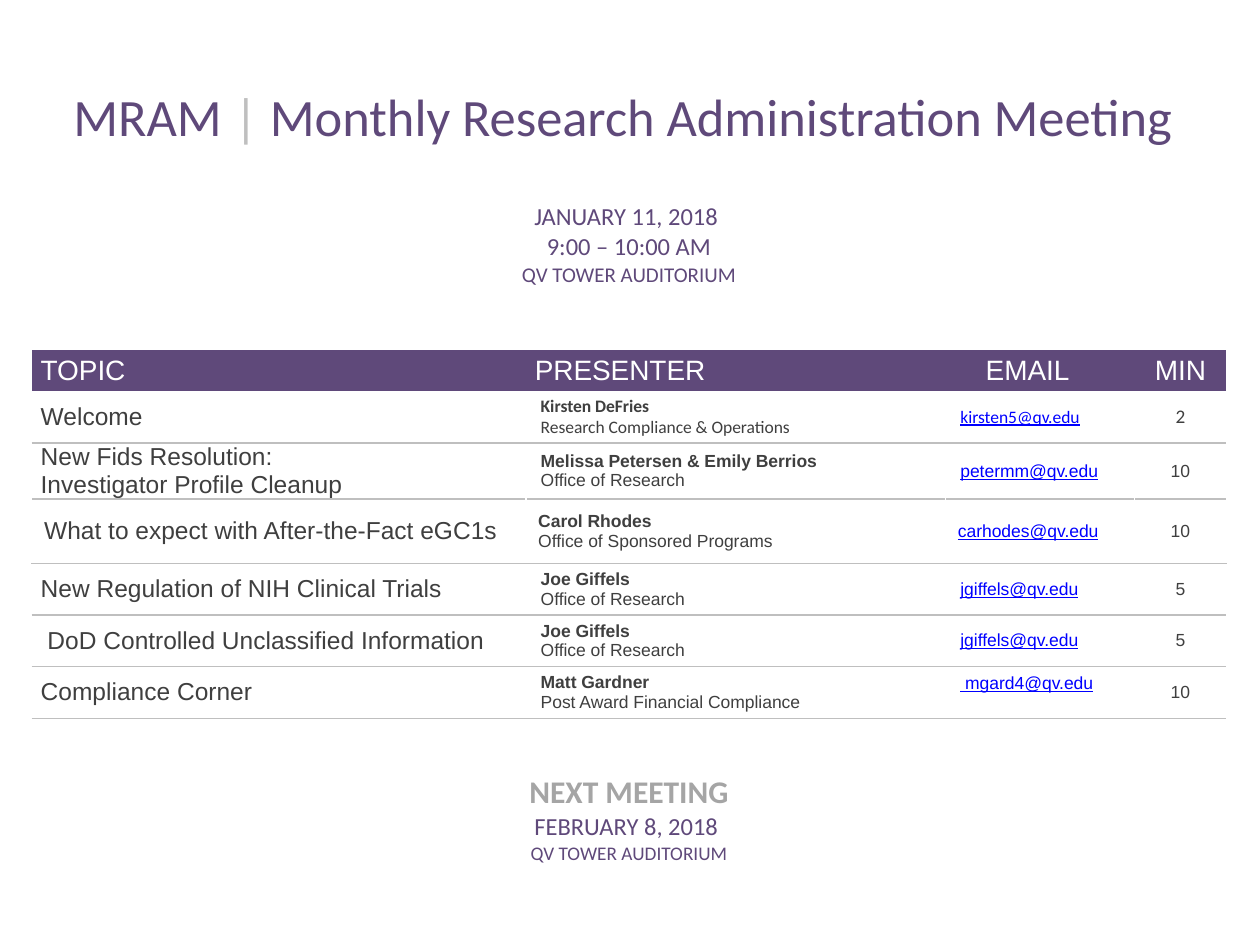
"""Build the agenda slide of a monthly research administration meeting."""
from lxml import etree
from pptx import Presentation
from pptx.dml.color import RGBColor
from pptx.enum.text import MSO_ANCHOR, PP_ALIGN
from pptx.oxml.ns import qn
from pptx.util import Cm, Pt

LEFT, CENTER = PP_ALIGN.LEFT, PP_ALIGN.CENTER
MIDDLE, BOTTOM = MSO_ANCHOR.MIDDLE, MSO_ANCHOR.BOTTOM

THEME = {
    "purple": "5F497A", "rule": "BFBFBF", "gray": "A5A5A5", "ink": "3F3F3F",
    "link": "0000FF", "white": "FFFFFF",
    "sans": "Arial", "humanist": "Calibri",
    "title": 30, "next": 18, "header": 16, "topic": 14, "date": 14,
    "place": 12, "minutes": 11, "next_place": 11, "detail": 10,
}

TITLE = ["MRAM ", "|", " Monthly Research Administration Meeting "]
MEETING = [("JANUARY 11, 2018 ", "date"), ("9:00 – 10:00 AM", "date"), ("QV TOWER AUDITORIUM", "place")]
NEXT_MEETING = [("NEXT MEETING", "next"), ("FEBRUARY 8, 2018 ", "date"), ("QV TOWER AUDITORIUM", "next_place")]
HEADERS = ["TOPIC", "PRESENTER", "EMAIL", "MIN"]
AGENDA = [
    (["Welcome"], "Kirsten DeFries", "Research Compliance & Operations", "kirsten5@qv.edu", "2"),
    (["New Fids Resolution:", "Investigator Profile Cleanup"],
     "Melissa Petersen & Emily Berrios", "Office of Research", "petermm@qv.edu", "10"),
    (["What to expect with After-the-Fact eGC1s"],
     "Carol Rhodes", "Office of Sponsored Programs", "carhodes@qv.edu", "10"),
    (["New Regulation of NIH Clinical Trials"], "Joe Giffels", "Office of Research", "jgiffels@qv.edu", "5"),
    ([" DoD Controlled Unclassified Information"], "Joe Giffels", "Office of Research", "jgiffels@qv.edu", "5"),
    (["Compliance Corner"], "Matt Gardner", "Post Award Financial Compliance", " mgard4@qv.edu", "10"),
]
WELCOME, AFTER_THE_FACT, COMPLIANCE = 0, 2, 5

COLUMN_WIDTHS = [9.96, 8.46, 3.81, 1.85]
ROW_HEIGHTS = [1.57, 4.01, 0.84, 1.04, 1.13, 1.3, 1.04, 1.04, 1.04, 2.97]
TABLE_LEFT, TABLE_TOP = 0.64, 1.47
FIRST_AGENDA_ROW = 3
NARROW, WIDE, EVEN = 0.18, 0.3, 0.25
HEADER_INDENTS = [NARROW, NARROW, 0.81, NARROW]


def add_text(paragraph, text, size, color, font="sans", bold=False, underline=False, align=LEFT):
    paragraph.alignment = align
    run = paragraph.add_run()
    run.text = text
    run.font.name = THEME[font]
    run.font.size = Pt(THEME[size])
    run.font.color.rgb = RGBColor.from_string(THEME[color])
    run.font.bold = bold
    run.font.underline = underline


def add_lines(cell, lines):
    frame = cell.text_frame
    for index, (text, style) in enumerate(lines):
        paragraph = frame.add_paragraph() if index else frame.paragraphs[0]
        add_text(paragraph, text, **style)


def set_border(cell, **colors):
    properties = cell._tc.get_or_add_tcPr()
    for index, side in enumerate("LRTB"):
        line = etree.Element(qn(f"a:ln{side}"), w=str(Pt(1)))
        color = colors.get(side)
        if color:
            fill = etree.SubElement(line, qn("a:solidFill"))
            etree.SubElement(fill, qn("a:srgbClr"), val=THEME[color])
        else:
            etree.SubElement(line, qn("a:noFill"))
        properties.insert(index, line)


def format_cell(cell, fill="white", anchor=MIDDLE, left=NARROW, right=NARROW, top=0, bottom=0, **borders):
    cell.fill.solid()
    cell.fill.fore_color.rgb = RGBColor.from_string(THEME[fill])
    cell.vertical_anchor = anchor
    cell.margin_left, cell.margin_right = Cm(left), Cm(right)
    cell.margin_top, cell.margin_bottom = Cm(top), Cm(bottom)
    set_border(cell, **borders)


def fill_banner(table, row, bottom=0, **borders):
    cell = table.cell(row, 0)
    cell.merge(table.cell(row, len(COLUMN_WIDTHS) - 1))
    format_cell(cell, anchor=BOTTOM, bottom=bottom, **borders)
    return cell


def fill_agenda_row(table, index, topic, presenter, office, email, minutes):
    font = "humanist" if index == WELCOME else "sans"
    detail = {"size": "detail", "color": "ink", "font": font}
    minutes_size = "minutes" if index == WELCOME else "detail"
    columns = [
        [(line, {"size": "topic", "color": "ink"}) for line in topic],
        [(presenter, {**detail, "bold": True}), (office, detail)],
        [(email, {**detail, "color": "link", "underline": True})],
        [(minutes, {**detail, "size": minutes_size, "align": CENTER})],
    ]
    borders = {"B": "rule"}
    if index:
        borders["T"] = "rule"
    for column, lines in enumerate(columns):
        cell = table.cell(FIRST_AGENDA_ROW + index, column)
        add_lines(cell, lines)
        if index == AFTER_THE_FACT:
            format_cell(cell, left=EVEN, right=EVEN, top=EVEN, bottom=EVEN, L="white", R="white", **borders)
        else:
            margin = WIDE if column in (1, 2) else NARROW
            lift = 0.37 if index == COMPLIANCE and column == 2 else 0
            format_cell(cell, left=margin, right=margin, bottom=lift, **borders)


def main():
    presentation = Presentation()
    presentation.slide_width, presentation.slide_height = Cm(25.4), Cm(19.05)
    slide = presentation.slides.add_slide(presentation.slide_layouts[6])
    table = slide.shapes.add_table(
        len(ROW_HEIGHTS), len(COLUMN_WIDTHS), Cm(TABLE_LEFT), Cm(TABLE_TOP),
        Cm(sum(COLUMN_WIDTHS)), Cm(sum(ROW_HEIGHTS))).table
    table.first_row = table.horz_banding = False
    for column, width in zip(table.columns, COLUMN_WIDTHS):
        column.width = Cm(width)
    for row, height in zip(table.rows, ROW_HEIGHTS):
        row.height = Cm(height)

    title = fill_banner(table, 0).text_frame.paragraphs[0]
    for text, color in zip(TITLE, ("purple", "rule", "purple")):
        add_text(title, text, "title", color, font="humanist", align=CENTER)

    banner = {"font": "humanist", "align": CENTER}
    add_lines(fill_banner(table, 1, bottom=1.25),
              [(text, {**banner, "size": size, "color": "purple"}) for text, size in MEETING])
    add_lines(fill_banner(table, len(ROW_HEIGHTS) - 1, T="rule"),
              [(text, {**banner, "size": size, "bold": size == "next",
                       "color": "gray" if size == "next" else "purple"})
               for text, size in NEXT_MEETING])

    for column, (text, indent) in enumerate(zip(HEADERS, HEADER_INDENTS)):
        cell = table.cell(FIRST_AGENDA_ROW - 1, column)
        add_lines(cell, [(text, {"size": "header", "color": "white",
                                 "align": CENTER if text == "MIN" else LEFT})])
        format_cell(cell, fill="purple", left=indent)

    for index, item in enumerate(AGENDA):
        fill_agenda_row(table, index, *item)
    presentation.save("out.pptx")


if __name__ == "__main__":
    main()
